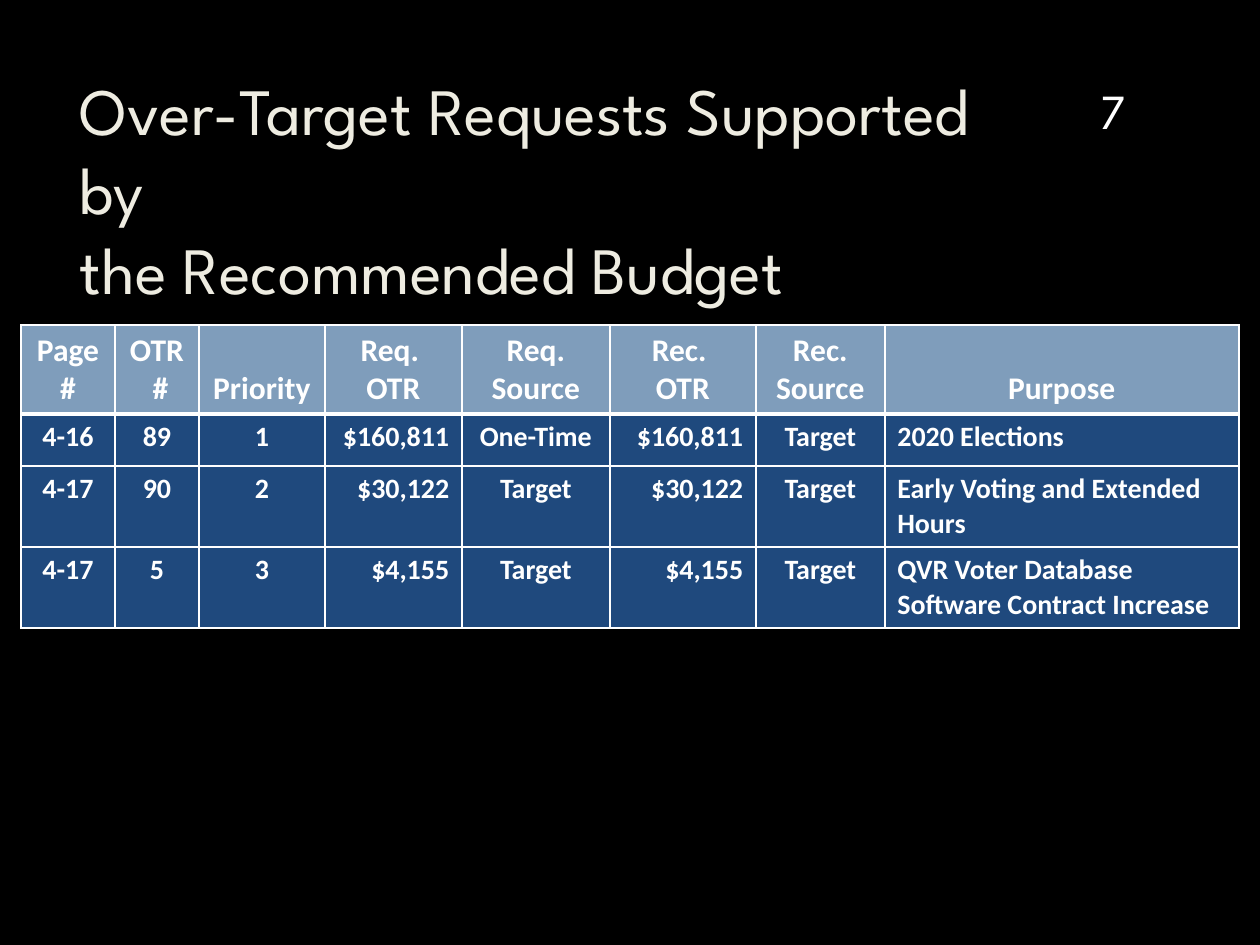
from lxml import etree
from pptx import Presentation, util as u
from pptx.dml.color import RGBColor
from pptx.enum import text
from pptx.oxml.ns import qn

PX = 914400 // 126
BLACK = RGBColor(0, 0, 0)
CREAM = RGBColor(0xEE, 0xEC, 0xE1)
WHITE = RGBColor(0xFF, 0xFF, 0xFF)
STEEL = RGBColor(0x7F, 0x9D, 0xBB)
NAVY = RGBColor(0x1F, 0x49, 0x7D)
LEFT, MID, RIGHT = text.PP_ALIGN.LEFT, text.PP_ALIGN.CENTER, text.PP_ALIGN.RIGHT
TOP, LOW = text.MSO_ANCHOR.TOP, text.MSO_ANCHOR.BOTTOM

HEADS = ["Page \n#", "OTR\n #", "Priority", "Req. \nOTR", "Req. Source",
         "Rec. \nOTR", "Rec. Source", "Purpose"]
ROWS = [
    ["4-16", "89", "1", "$160,811", "One-Time", "$160,811", "Target", "2020 Elections"],
    ["4-17", "90", "2", "$30,122", "Target", "$30,122", "Target",
     "Early Voting and Extended Hours"],
    ["4-17", "5", "3", "$4,155", "Target", "$4,155", "Target",
     "QVR Voter Database Software Contract Increase"],
]
WIDTHS = [94, 84, 126, 137, 148, 146, 129, 354]
HEIGHTS = [89, 52, 81, 81]
ALIGNS = [MID, MID, MID, RIGHT, MID, RIGHT, MID, LEFT]


def write(frame, words, size, font="League Spartan", color=WHITE, align=LEFT, bold=False):
    frame.word_wrap = True
    frame.text = words
    for para in frame.paragraphs:
        para.alignment = align
        for run in para.runs:
            run.font.size = u.Pt(size)
            run.font.name = font
            run.font.bold = bold
            run.font.color.rgb = color


def place(shape, *box):
    shape.left, shape.top, shape.width, shape.height = [n * PX for n in box]


def add_title(slide, words, *box):
    title = slide.shapes.title
    place(title, *box)
    write(title.text_frame, words, 37.8, color=CREAM)
    title.text_frame.auto_size = text.MSO_AUTO_SIZE.NONE
    title.text_frame.vertical_anchor = TOP


def add_number(slide, words, *box):
    frame = slide.shapes.add_textbox(*[n * PX for n in box]).text_frame
    write(frame, words, 28, align=MID)
    frame.vertical_anchor = LOW


def rule(side, width):
    line = etree.Element(qn("a:ln" + side), w=str(u.Pt(width)))
    fill = etree.SubElement(line, qn("a:solidFill"))
    etree.SubElement(fill, qn("a:srgbClr"), val=str(WHITE))
    return line


def fill_cell(cell, words, align, head, under):
    write(cell.text_frame, words, 18 if head else 16, "Calibri", align=align, bold=True)
    cell.vertical_anchor = LOW if head else TOP
    cell.fill.solid()
    cell.fill.fore_color.rgb = STEEL if head else NAVY
    widths = {"L": 1, "R": 1, "T": 3 if under else 1, "B": 3 if head else 1}
    props = cell._tc.get_or_add_tcPr()
    for spot, (side, width) in enumerate(widths.items()):
        props.insert(spot, rule(side, width))


def add_grid(slide, left, top):
    rows = [HEADS] + ROWS
    box = (left, top, sum(WIDTHS), sum(HEIGHTS))
    grid = slide.shapes.add_table(len(rows), len(WIDTHS), *[n * PX for n in box]).table
    grid.horz_banding = False
    for col, width in zip(grid.columns, WIDTHS):
        col.width = width * PX
    for line, height in zip(grid.rows, HEIGHTS):
        line.height = height * PX
    for r, row in enumerate(rows):
        for c, words in enumerate(row):
            align = ALIGNS[c] if r else MID
            fill_cell(grid.cell(r, c), words, align, r == 0, r == 1)


def main():
    """Build the slide of over-target requests."""
    deck = Presentation()
    deck.slide_width, deck.slide_height = 1260 * PX, 945 * PX
    slide = deck.slides.add_slide(deck.slide_layouts[5])
    slide.background.fill.solid()
    slide.background.fill.fore_color.rgb = BLACK
    add_title(slide, "Over-Target Requests Supported by \vthe Recommended Budget",
              67, 63, 973, 193)
    add_number(slide, "7", 1070, 40, 87, 106)
    add_grid(slide, 21, 325)
    deck.save("out.pptx")


if __name__ == "__main__":
    main()
